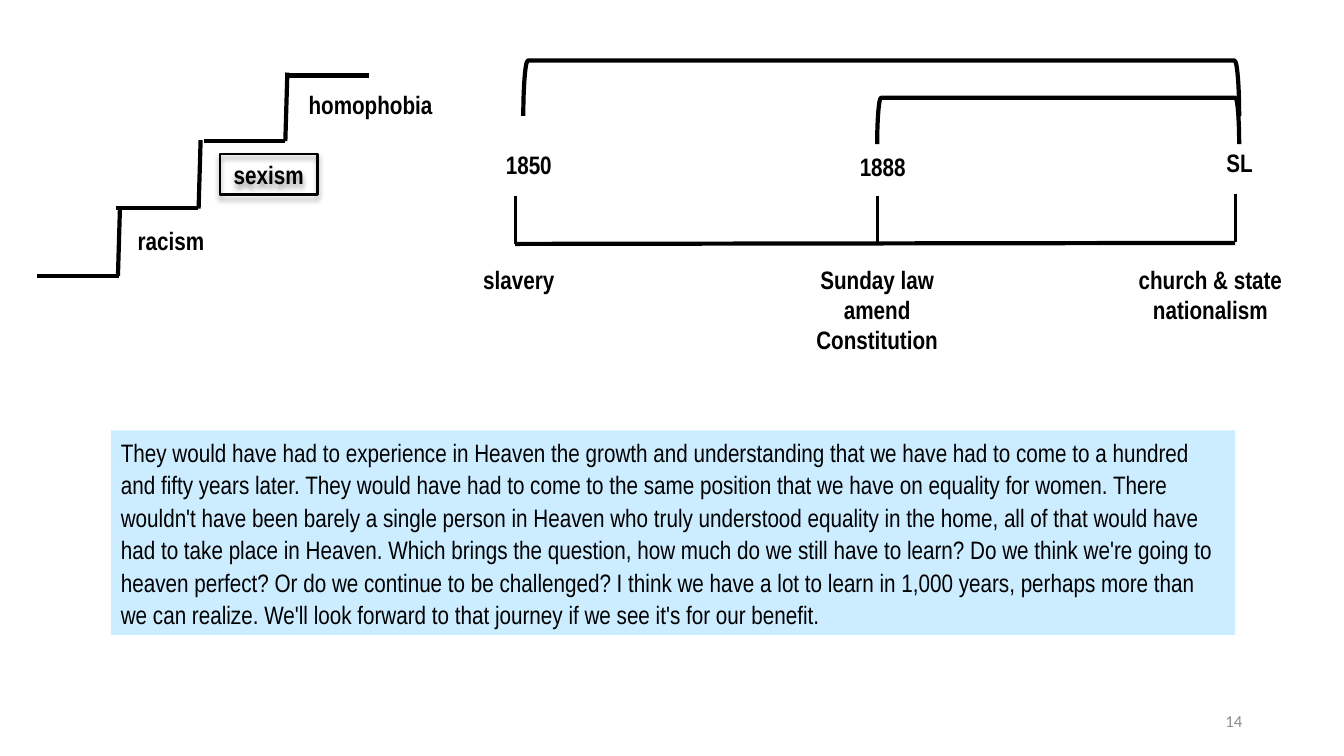
from lxml.etree import SubElement as Sub
from pptx import Presentation
from pptx.dml.color import RGBColor
from pptx.enum.shapes import MSO_CONNECTOR as Conn, MSO_SHAPE as Shape
from pptx.enum.text import MSO_ANCHOR as Anchor, MSO_AUTO_SIZE as Auto, PP_ALIGN as Align
from pptx.oxml.ns import qn
from pptx.util import Pt

PX = 9144  # 100 px to the inch
BLACK = RGBColor(0, 0, 0)
GREY = RGBColor(0x8C, 0x8C, 0x8C)
SKY = RGBColor(0xCC, 0xEC, 0xFF)

BOLD = dict(name="Arial Narrow", size=Pt(18), bold=True)
PLAIN = dict(name="Arial Narrow", size=Pt(18), bold=False)
SMALL = dict(name="Calibri", size=Pt(12), bold=False)

QUOTE = (
    "They would have had to experience in Heaven the growth and understanding "
    "that we have had to come to a hundred and fifty years later. They would have "
    "had to come to the same position that we have on equality for women. There "
    "wouldn't have been barely a single person in Heaven who truly understood "
    "equality in the home, all of that would have had to take place in Heaven. "
    "Which brings the question, how much do we still have to learn? Do we think "
    "we're going to heaven perfect? Or do we continue to be challenged? I think we "
    "have a lot to learn in 1,000 years, perhaps more than we can realize. We'll "
    "look forward to that journey if we see it's for our benefit."
)

LABELS = [
    # years
    ("1850", 476, 143, 97, 40),
    ("1888", 815, 145, 121, 40),
    ("SL", 1187, 141, 85, 40),
    # events
    ("slavery", 466, 257, 97, 40),
    ("Sunday law\namend Constitution", 788, 257, 164, 101),
    ("church & state\nnationalism", 1094, 257, 213, 71),
    # steps
    ("racism", 121, 219, 97, 40),
    ("homophobia", 293, 84, 149, 40),
]
TREADS = [(37, 274), (115, 206), (202, 140), (285, 75)]
RISERS = [(117, 274), (197, 207), (283, 140)]
TICKS = [(511, 194), (870, 194), (1225, 192)]


def emu(*vals):
    return [round(v * PX) for v in vals]


def write(shape, text, font, align=Align.CENTER, color=BLACK, space=None):
    frame = shape.text_frame
    frame.word_wrap = True
    frame.text = text
    for para in frame.paragraphs:
        para.alignment = align
        para.line_spacing = space
        for run in para.runs:
            for key, val in font.items():
                setattr(run.font, key, val)
            run.font.color.rgb = color
    return frame


def label(slide, text, *box):
    shape = slide.shapes.add_textbox(*emu(*box))
    write(shape, text, BOLD).auto_size = Auto.SHAPE_TO_FIT_TEXT


def line(slide, x1, y1, x2, y2, width=3):
    link = slide.shapes.add_connector(Conn.STRAIGHT, *emu(x1, y1, x2, y2))
    link.line.color.rgb = BLACK
    link.line.width = Pt(width)
    Sub(link._element.spPr, qn("a:effectLst"))


def block(slide, kind, box, fill=None, width=None):
    shape = slide.shapes.add_shape(kind, *emu(*box))
    shape.shadow.inherit = False
    if fill is None:
        shape.fill.background()
    else:
        shape.fill.solid()
        shape.fill.fore_color.rgb = fill
    if width is None:
        shape.line.fill.background()
    else:
        shape.line.color.rgb = BLACK
        shape.line.width = Pt(width)
    return shape


def brace(slide, x, y, w, h):
    # A left bracket turned upright about its centre
    box = (x + (w - h) / 2, y + (h - w) / 2, h, w)
    block(slide, Shape.LEFT_BRACKET, box, width=3).rotation = 90


def shade(shape):
    effects = shape._element.spPr.find(qn("a:effectLst"))
    outer = Sub(effects, qn("a:outerShdw"), blurRad=str(Pt(4)),
                dist=str(Pt(3)), dir="5400000", rotWithShape="0")
    tint = Sub(outer, qn("a:srgbClr"), val=str(BLACK))
    Sub(tint, qn("a:alpha"), val="40000")


def main():
    deck = Presentation()
    deck.slide_width, deck.slide_height = emu(1333, 750)
    slide = deck.slides.add_slide(deck.slide_layouts[6])

    # Page number
    page = slide.shapes.add_textbox(*emu(942, 695, 300, 40))
    write(page, "14", SMALL, Align.RIGHT, GREY).vertical_anchor = Anchor.MIDDLE

    # Timeline
    line(slide, 511, 242, 1225, 241)
    for x, y in TICKS:
        line(slide, x, y, x, y + 48, 2.25)
    brace(slide, 519, 60, 710, 55)
    brace(slide, 870, 97, 359, 46)

    # Stairs
    for x, y in TREADS:
        line(slide, x, y, x + 81, y)
    for x, y in RISERS:
        line(slide, x, y, x + 2, y - 68)

    # Labels
    for item in LABELS:
        label(slide, *item)
    step = block(slide, Shape.RECTANGLE, (218, 153, 97, 40), width=1.5)
    write(step, "sexism", BOLD)
    shade(step)

    # Quote
    quote = block(slide, Shape.RECTANGLE, (110, 427, 1115, 203), SKY)
    write(quote, QUOTE, PLAIN, Align.LEFT, space=1.07).vertical_anchor = Anchor.TOP

    deck.save("out.pptx")


if __name__ == "__main__":
    main()
